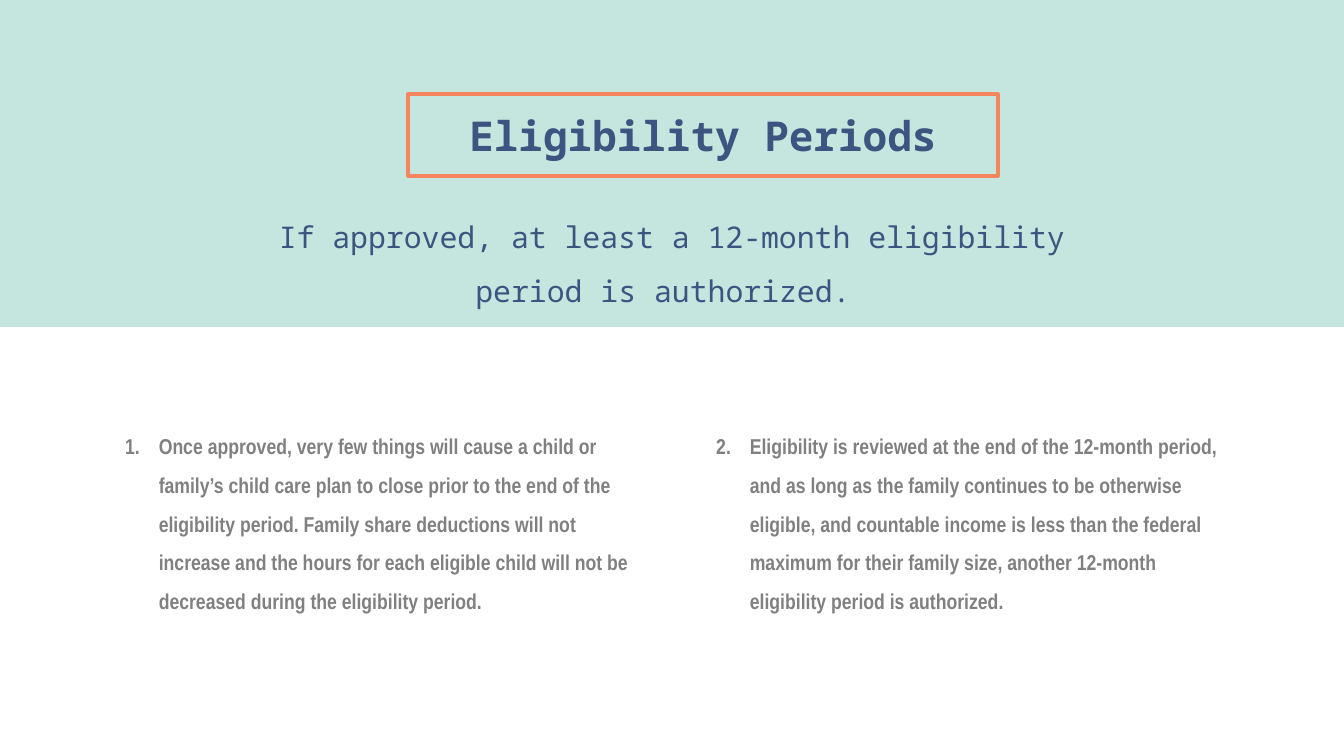
import pptx
import pptx.dml.color
import pptx.enum.shapes
import pptx.enum.text
import pptx.oxml
import pptx.oxml.ns
import pptx.util

EMU_PER_PX = 914400 / 134.4
MINT, NAVY, CORAL, GRAY = "C5E6DF", "3C5480", "F4855F", "808080"
HEADING_FONT, BODY_FONT = "Noto Sans Mono", "Arial Narrow"
PERIOD_RULES = [
    (112, 536, "Once approved, very few things will cause a child or family’s child care plan "
     "to close prior to the end of the eligibility period. Family share deductions will not "
     "increase and the hours for each eligible child will not be decreased during the "
     "eligibility period."),
    (703, 528, "Eligibility is reviewed at the end of the 12-month period, and as long as the "
     "family continues to be otherwise eligible, and countable income is less than the federal "
     "maximum for their family size, another 12-month eligibility period is authorized."),
]


def px(length):
    return pptx.util.Emu(round(length * EMU_PER_PX))


def color(value):
    return pptx.dml.color.RGBColor.from_string(value)


def write_text(paragraph, text, font, size, text_color, bold=False):
    run = paragraph.add_run()
    run.text = text
    run.font.name = font
    run.font.size = pptx.util.Pt(size)
    run.font.bold = bold
    run.font.color.rgb = color(text_color)


def add_band(slide, width, height):
    shape = slide.shapes.add_shape(
        pptx.enum.shapes.MSO_SHAPE.RECTANGLE, 0, 0, px(width), px(height))
    shape.shadow.inherit = False
    shape.fill.solid()
    shape.fill.fore_color.rgb = color(MINT)
    shape.line.fill.background()


def add_paragraph_box(slide, left, top, width, height):
    shape = slide.shapes.add_textbox(px(left), px(top), px(width), px(height))
    shape.text_frame.word_wrap = True
    shape.text_frame.auto_size = pptx.enum.text.MSO_AUTO_SIZE.SHAPE_TO_FIT_TEXT
    paragraph = shape.text_frame.paragraphs[0]
    paragraph.line_spacing = 1.5
    return paragraph


def number_paragraph(paragraph, number):
    properties = paragraph._p.get_or_add_pPr()
    properties.set("marL", "228600")
    properties.set("indent", "-228600")
    properties.append(pptx.oxml.parse_xml(
        f'<a:buFont {pptx.oxml.ns.nsdecls("a")} typeface="+mj-lt"/>'))
    properties.append(pptx.oxml.parse_xml(
        f'<a:buAutoNum {pptx.oxml.ns.nsdecls("a")} type="arabicPeriod" startAt="{number}"/>'))


def add_pill_title(slide, text, left, top, width, height):
    title = slide.shapes.title
    title.left, title.top, title.width, title.height = map(px, (left, top, width, height))
    title._element.spPr.append(pptx.oxml.parse_xml(
        f'<a:prstGeom {pptx.oxml.ns.nsdecls("a")} prst="roundRect"><a:avLst>'
        '<a:gd name="adj" fmla="val 50000"/></a:avLst></a:prstGeom>'))
    title.fill.background()
    title.line.color.rgb = color(CORAL)
    title.line.width = pptx.util.Pt(1.75)
    frame = title.text_frame
    frame.word_wrap = True
    frame.auto_size = pptx.enum.text.MSO_AUTO_SIZE.NONE
    frame.vertical_anchor = pptx.enum.text.MSO_ANCHOR.MIDDLE
    frame.paragraphs[0].alignment = pptx.enum.text.PP_ALIGN.CENTER
    write_text(frame.paragraphs[0], text, HEADING_FONT, 22, NAVY, bold=True)
    slide.shapes._spTree.append(title._element)


def main():
    presentation = pptx.Presentation()
    presentation.slide_width, presentation.slide_height = px(1344), px(756)
    slide = presentation.slides.add_slide(presentation.slide_layouts[5])

    add_band(slide, 1344, 327)
    subtitle = add_paragraph_box(slide, 261, 194, 822, 117)
    subtitle.alignment = pptx.enum.text.PP_ALIGN.CENTER
    write_text(subtitle, "If approved, at least a 12-month eligibility period is authorized. ",
               HEADING_FONT, 16, NAVY)

    for number, (left, width, text) in enumerate(PERIOD_RULES, start=1):
        paragraph = add_paragraph_box(slide, left, 414, width, 242)
        number_paragraph(paragraph, number)
        write_text(paragraph, text, BODY_FONT, 11.5, GRAY, bold=True)

    add_pill_title(slide, "Eligibility Periods", 408, 94, 590, 82)
    presentation.save("out.pptx")


if __name__ == "__main__":
    main()
